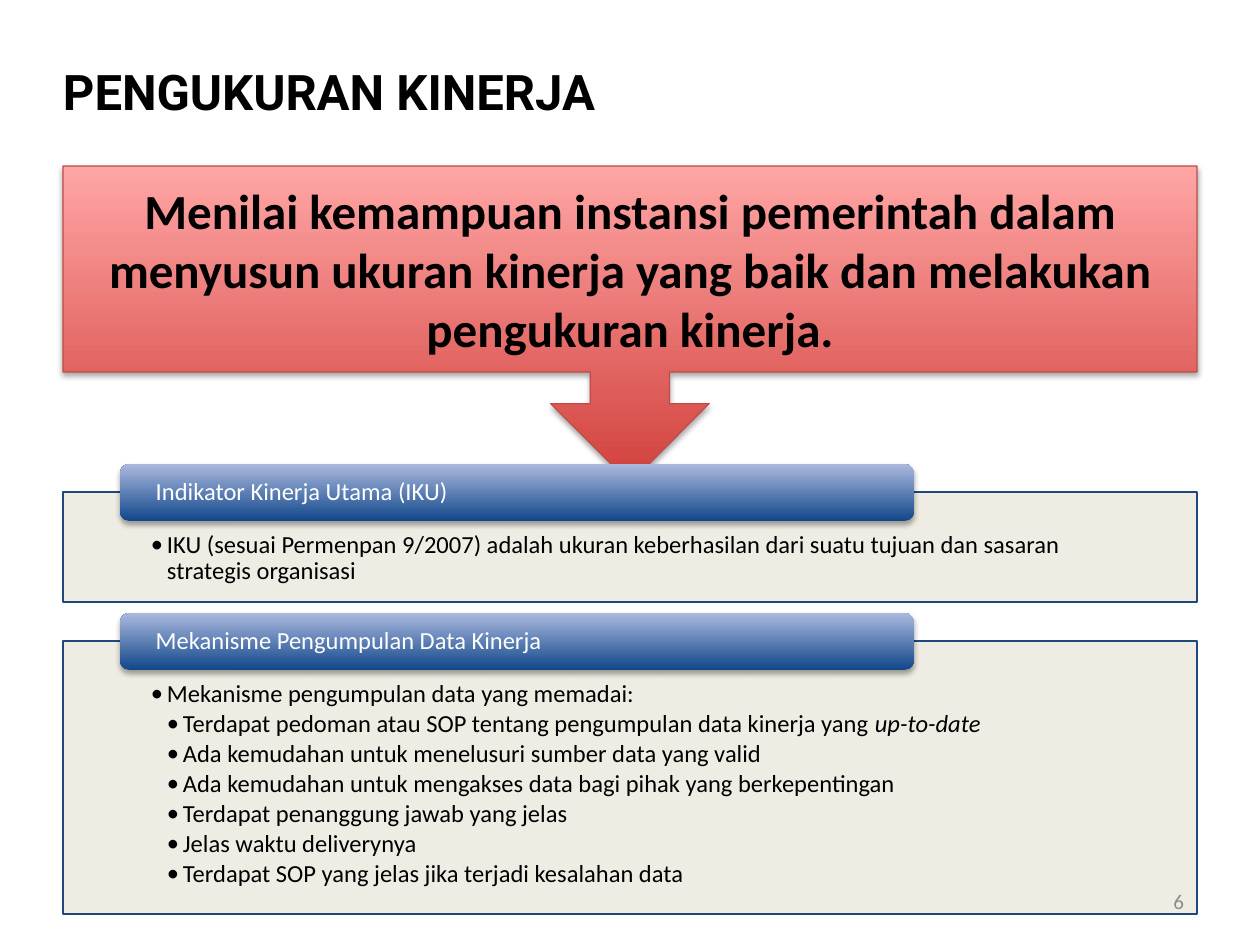
from lxml import etree
from pptx import Presentation
from pptx.dml.color import RGBColor
from pptx.enum.shapes import MSO_SHAPE
from pptx.enum.text import MSO_ANCHOR, PP_ALIGN
from pptx.oxml import parse_xml
from pptx.oxml.ns import nsdecls, qn
from pptx.util import Emu, Pt

SCALE = 914400 / 126
BLACK = RGBColor(0x00, 0x00, 0x00)
WHITE = RGBColor(0xFF, 0xFF, 0xFF)
GRAY = RGBColor(0x8C, 0x8C, 0x8C)
RED_DARK = RGBColor(0xD1, 0x40, 0x3C)
RED_LIGHT = RGBColor(0xFF, 0xA6, 0xA5)
RED_LINE = RGBColor(0xBF, 0x4C, 0x48)
BLUE_DARK = RGBColor(0x11, 0x47, 0x8B)
BLUE_LIGHT = RGBColor(0xAB, 0xB9, 0xDE)
NAVY = RGBColor(0x1F, 0x49, 0x7D)
CREAM = RGBColor(0xEE, 0xEC, 0xE1)

CALLOUT = MSO_SHAPE.DOWN_ARROW_CALLOUT
RECTANGLE = MSO_SHAPE.RECTANGLE
ROUNDED = MSO_SHAPE.ROUNDED_RECTANGLE
MIDDLE, TOP = MSO_ANCHOR.MIDDLE, MSO_ANCHOR.TOP
LEFT, CENTER, RIGHT = PP_ALIGN.LEFT, PP_ALIGN.CENTER, PP_ALIGN.RIGHT

MARGIN, WIDTH = 63, 1134
INDENT = 16
DEFAULT_INSETS = (13, 6, 13, 6)

# Each panel: top, height, heading, items of (level, plain text, italic text)
PANELS = [
    (492, 110, "Indikator Kinerja Utama (IKU)", [
        (1, "IKU (sesuai Permenpan 9/2007) adalah ukuran keberhasilan dari "
            "suatu tujuan dan sasaran strategis organisasi", ""),
    ]),
    (641, 273, "Mekanisme Pengumpulan Data Kinerja", [
        (1, "Mekanisme pengumpulan data yang memadai:", ""),
        (2, "Terdapat pedoman atau SOP tentang pengumpulan data kinerja yang ",
         "up-to-date"),
        (2, "Ada kemudahan untuk menelusuri sumber data yang valid", ""),
        (2, "Ada kemudahan untuk mengakses data bagi pihak yang berkepentingan", ""),
        (2, "Terdapat penanggung jawab yang jelas", ""),
        (2, "Jelas waktu deliverynya", ""),
        (2, "Terdapat SOP yang jelas jika terjadi kesalahan data", ""),
    ]),
]


def px(value):
    return Emu(round(value * SCALE))


def set_values(target, values):
    for name, value in values.items():
        setattr(target, name, value)


def set_font(font, size, color, **values):
    set_values(font, {"name": "Calibri", "size": Pt(size), **values})
    font.color.rgb = color


def prepare_frame(shape, anchor, insets=DEFAULT_INSETS):
    frame = shape.text_frame
    sides = ("margin_left", "margin_top", "margin_right", "margin_bottom")
    set_values(frame, dict(zip(sides, map(px, insets))))
    set_values(frame, {"word_wrap": True, "vertical_anchor": anchor})
    return frame


def write_line(frame, text, align, size, color, **values):
    para = frame.paragraphs[0]
    para.alignment = align
    span = para.add_run()
    span.text = text
    set_font(span.font, size, color, **values)
    return para


def add_label(page, bounds, text, align, size, color, **values):
    box = page.shapes.add_textbox(*map(px, bounds))
    write_line(prepare_frame(box, MIDDLE), text, align, size, color, **values)


def add_block(page, kind, bounds, line_color=None):
    block = page.shapes.add_shape(kind, *map(px, bounds))
    block.shadow.inherit = False
    if line_color is None:
        block.line.fill.background()
    else:
        block.line.color.rgb = line_color
        block.line.width = Pt(0.75)
    return block


def fill_upward(shape, bottom, top):
    shape.fill.gradient()
    shape.fill.gradient_angle = 90
    for stop, color in zip(shape.fill.gradient_stops, (bottom, top)):
        stop.color.rgb = color


def add_shadow(shape):
    effects = shape._element.spPr.find(qn("a:effectLst"))
    effects.append(parse_xml(
        f'<a:outerShdw {nsdecls("a")} blurRad="{Pt(3.1)}" dist="{Pt(1.8)}" '
        'dir="5400000" rotWithShape="0"><a:srgbClr val="000000">'
        '<a:alpha val="35000"/></a:srgbClr></a:outerShdw>'))


def set_opacity(shape, percent):
    color = shape._element.spPr.find(qn("a:solidFill"))[0]
    etree.SubElement(color, qn("a:alpha")).set("val", str(percent * 1000))


def add_bullet(para, level):
    properties = para._p.get_or_add_pPr()
    properties.set("marL", str(px(INDENT * level)))
    properties.set("indent", str(-px(INDENT)))
    etree.SubElement(properties, qn("a:buFont")).set("typeface", "Calibri")
    etree.SubElement(properties, qn("a:buChar")).set("char", "•")


def write_items(frame, items):
    for number, (level, plain, italic) in enumerate(items):
        para = frame.add_paragraph() if number else frame.paragraphs[0]
        add_bullet(para, level)
        set_values(para, {"level": level, "alignment": LEFT,
                          "line_spacing": 0.9, "space_after": Pt(2)})
        for text, slanted in ((plain, False), (italic, True)):
            if text:
                span = para.add_run()
                span.text = text
                set_font(span.font, 14, BLACK, italic=slanted)


def add_panel(page, top, height, heading, items):
    body = add_block(page, RECTANGLE, (MARGIN, top, WIDTH, height), NAVY)
    body.fill.solid()
    body.fill.fore_color.rgb = CREAM
    set_opacity(body, 90)
    write_items(prepare_frame(body, TOP, (88, 40, 88, 14)), items)

    header = add_block(page, ROUNDED, (120, top - 28, 794, 57))
    fill_upward(header, BLUE_DARK, BLUE_LIGHT)
    add_shadow(header)
    frame = prepare_frame(header, MIDDLE, (33, 0, 33, 0))
    write_line(frame, heading, LEFT, 14, WHITE).line_spacing = 0.9


def add_callout(page, text):
    callout = add_block(page, CALLOUT, (MARGIN, 166, WIDTH, 317), RED_LINE)
    fill_upward(callout, RED_DARK, RED_LIGHT)
    add_shadow(callout)
    write_line(prepare_frame(callout, MIDDLE), text, CENTER, 28, BLACK, bold=True)


def main():
    deck = Presentation()
    set_values(deck, {"slide_width": px(1260), "slide_height": px(945)})
    page = deck.slides.add_slide(deck.slide_layouts[6])
    add_label(page, (50, 38, 1134, 105), "PENGUKURAN KINERJA", LEFT, 28, BLACK,
              name="Roboto", bold=True)
    add_callout(page, "Menilai kemampuan instansi pemerintah dalam menyusun "
                      "ukuran kinerja yang baik dan melakukan pengukuran kinerja.")
    for panel in PANELS:
        add_panel(page, *panel)
    add_label(page, (903, 876, 294, 50), "6", RIGHT, 12, GRAY)
    deck.save("out.pptx")


if __name__ == "__main__":
    main()
